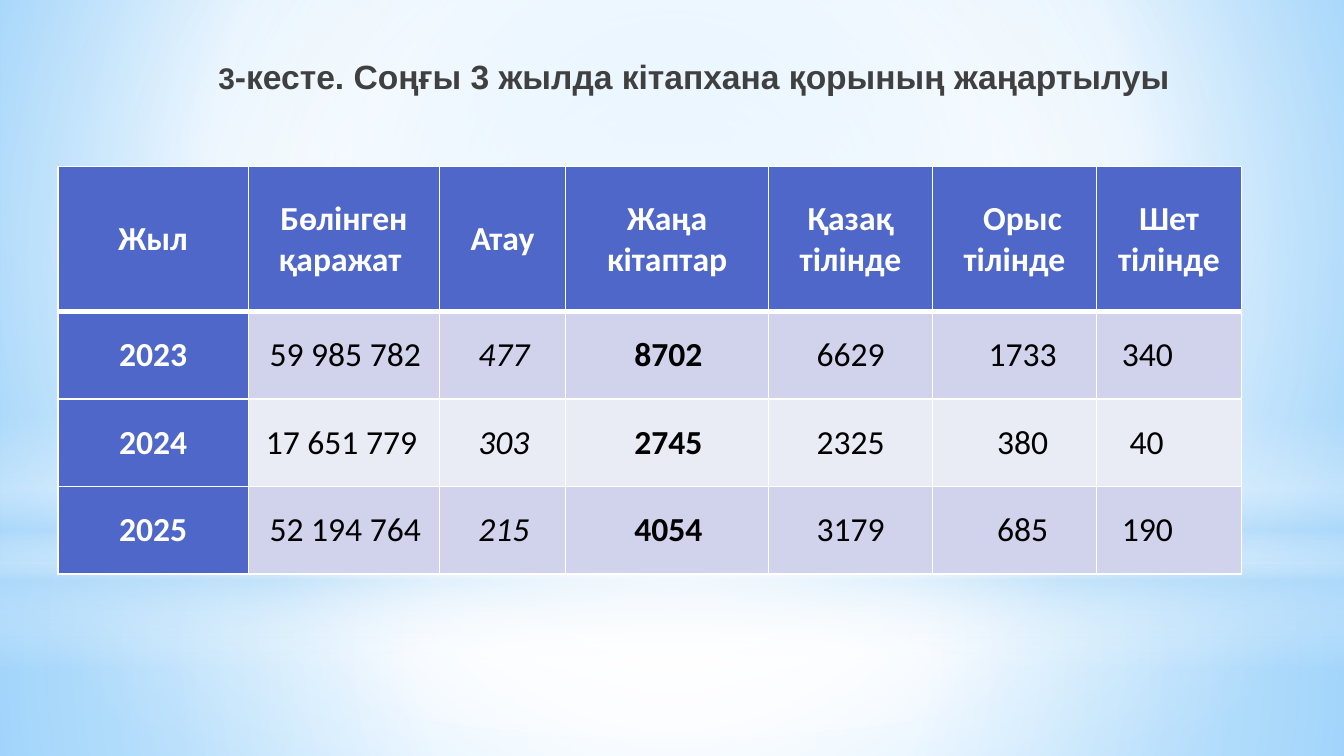
import pptx
import pptx.dml.color
import pptx.enum.shapes
import pptx.enum.text
import pptx.oxml
import pptx.oxml.ns
import pptx.util

Inches = pptx.util.Inches
Pt = pptx.util.Pt
RGBColor = pptx.dml.color.RGBColor
Shape = pptx.enum.shapes.MSO_SHAPE
Align = pptx.enum.text.PP_ALIGN
Anchor = pptx.enum.text.MSO_ANCHOR

WHITE = RGBColor(0xFF, 0xFF, 0xFF)
BLACK = RGBColor(0, 0, 0)
CHARCOAL = RGBColor(0x40, 0x40, 0x40)
INDIGO = RGBColor(0x4E, 0x67, 0xC8)
BAND_DARK = RGBColor(0xD0, 0xD3, 0xEB)
BAND_LIGHT = RGBColor(0xE9, 0xEB, 0xF5)
SKY = RGBColor(0x9E, 0xD5, 0xFF)
AZURE = RGBColor(0x5B, 0xB9, 0xFF)
PALE_BLUE = RGBColor(0xB4, 0xDC, 0xFA)

CENTRE = (50, 50, 50, 50)
NO_BREAK_SPACE = chr(160)
HEADERS = ["Жыл", "Бөлінген қаражат ", "Атау", "Жаңа кітаптар",
           "Қазақ тілінде", "Орыс тілінде", "Шет тілінде"]
YEARS = [
    ["2023", "59 985 782", "477", "8702", "6629", "1733", "340"],
    ["2024", "17 651 779 ", "303", "2745", "2325", "380", " 40"],
    ["2025", "52 194 764", "215", "4054", "3179", "685", "190"],
]
COLUMN_WIDTHS = [1.42, 1.42, 0.94, 1.51, 1.22, 1.22, 1.08]
ROW_HEIGHTS = [1.08, 0.65, 0.65, 0.65]
FIRST_LINE_INDENTS = [0, 0.02, 0.02, 0.02, 0, 0.12, 0.12]
FUNDS, TITLES, NEW_BOOKS, RUSSIAN, FOREIGN = 1, 2, 3, 5, 6


def write(paragraph, text, size=18, font="Calibri", color=BLACK, bold=False,
          italic=False, align=Align.CENTER, indent=0):
    paragraph.alignment = align
    if indent:
        paragraph._p.get_or_add_pPr().set("indent", str(Inches(indent)))
    run = paragraph.add_run()
    run.text = text
    run.font.size = Pt(size)
    run.font.name = font
    run.font.color.rgb = color
    run.font.bold = bold
    run.font.italic = italic


def gradient(stops, focus=None):
    """Radial gradient around focus, or a vertical one without it."""
    marks = "".join(
        f'<a:gs pos="{pos * 1000}"><a:srgbClr val="{color}">'
        f'<a:alpha val="{alpha * 1000}"/></a:srgbClr></a:gs>'
        for pos, color, alpha in stops)
    if focus:
        sides = " ".join(f'{side}="{value * 1000}"' for side, value in zip("ltrb", focus))
        course = f'<a:path path="circle"><a:fillToRect {sides}/></a:path>'
    else:
        course = '<a:lin ang="5400000" scaled="0"/>'
    return pptx.oxml.parse_xml(
        f'<a:gradFill {pptx.oxml.ns.nsdecls("a")} rotWithShape="1">'
        f'<a:gsLst>{marks}</a:gsLst>{course}</a:gradFill>')


class SlideBuilder:
    def __init__(self, slide):
        self.slide = slide
        self.border = WHITE

    def swap_fill(self, owner, fill):
        solid = owner.find(pptx.oxml.ns.qn("a:solidFill"))
        owner.replace(solid, fill)

    def background(self, stops, focus):
        fill = self.slide.background.fill
        fill.solid()
        fill.fore_color.rgb = WHITE
        self.swap_fill(self.slide.element.xpath(".//p:bgPr")[0], gradient(stops, focus))

    def glow(self, kind, top, height, stops, focus=None):
        glow = self.slide.shapes.add_shape(
            kind, 0, Inches(top), Inches(10), Inches(height))
        glow.shadow.inherit = False
        glow.line.fill.background()
        glow.fill.solid()
        glow.fill.fore_color.rgb = WHITE
        self.swap_fill(glow._element.spPr, gradient(stops, focus))

    def heading(self, left, top, width, height, parts):
        frame = self.slide.shapes.add_textbox(
            Inches(left), Inches(top), Inches(width), Inches(height)).text_frame
        frame.word_wrap = True
        frame.vertical_anchor = Anchor.TOP
        for text, size in parts:
            write(frame.paragraphs[0], text, size=size, font="Arial",
                  color=CHARCOAL, bold=True)

    def borders(self, cell, bottom):
        properties = cell._tc.get_or_add_tcPr()
        for side, width in (("L", 1), ("R", 1), ("T", 1), ("B", bottom)):
            properties.append(pptx.oxml.parse_xml(
                f'<a:ln{side} {pptx.oxml.ns.nsdecls("a")} w="{Pt(width)}">'
                f'<a:solidFill><a:srgbClr val="{self.border}"/></a:solidFill></a:ln{side}>'))

    def cell(self, cell, text, fill, bottom=1, **style):
        self.borders(cell, bottom)
        cell.fill.solid()
        cell.fill.fore_color.rgb = fill
        cell.vertical_anchor = Anchor.MIDDLE
        cell.margin_left = cell.margin_right = Inches(0.07)
        cell.margin_top = cell.margin_bottom = 0
        write(cell.text_frame.paragraphs[0], text, **style)

    def table(self, left, top, widths, heights):
        table = self.slide.shapes.add_table(
            len(heights), len(widths), Inches(left), Inches(top),
            Inches(sum(widths)), Inches(sum(heights))).table
        for column, width in zip(table.columns, widths):
            column.width = Inches(width)
        for row, height in zip(table.rows, heights):
            row.height = Inches(height)
        return table


def main():
    deck = pptx.Presentation()
    deck.slide_width = Inches(10)
    deck.slide_height = Inches(10 * 9 / 16)
    page = SlideBuilder(deck.slides.add_slide(deck.slide_layouts[6]))

    # Sky backdrop with soft light
    page.background([(0, SKY, 100), (60, WHITE, 100), (100, AZURE, 100)], (20, 10, 20, 60))
    page.glow(Shape.RECTANGLE, 4.19, 1.44,
              [(0, WHITE, 91), (37, WHITE, 76), (100, PALE_BLUE, 79)], CENTRE)
    page.glow(Shape.RECTANGLE, 0, 4.19,
              [(0, WHITE, 89), (48, WHITE, 62), (100, PALE_BLUE, 79)], CENTRE)
    page.glow(Shape.RECTANGLE, 3.09, 1.88,
              [(0, WHITE, 0), (29, WHITE, 30), (45, PALE_BLUE, 40),
               (55, WHITE, 26), (65, PALE_BLUE, 60), (100, WHITE, 0)])
    page.glow(Shape.OVAL, 1.31, 4.19, [(0, WHITE, 100), (56, WHITE, 0)], CENTRE)

    # Table caption
    page.heading(1.3, 0.37, 7.8, 0.94,
                 [("3", 16), ("-кесте. Соңғы 3 жылда кітапхана қорының жаңартылуы ", 18)])

    # Library stock by year
    stock = page.table(0.43, 1.24, COLUMN_WIDTHS, ROW_HEIGHTS)
    for col, header in enumerate(HEADERS):
        page.cell(stock.cell(0, col), header, INDIGO, bottom=3, color=WHITE, bold=True,
                  indent=FIRST_LINE_INDENTS[col] if col == RUSSIAN else 0)
    for row, values in enumerate(YEARS, start=1):
        band = BAND_DARK if row % 2 else BAND_LIGHT
        page.cell(stock.cell(row, 0), values[0], INDIGO, color=WHITE, bold=True)
        for col, value in enumerate(values[1:], start=1):
            if col == FUNDS:
                value = value.replace(" ", NO_BREAK_SPACE, 1)
            page.cell(stock.cell(row, col), value, band,
                      indent=FIRST_LINE_INDENTS[col],
                      bold=col == NEW_BOOKS, italic=col == TITLES,
                      align=Align.LEFT if col == FOREIGN else Align.CENTER)

    deck.save("out.pptx")


if __name__ == "__main__":
    main()
